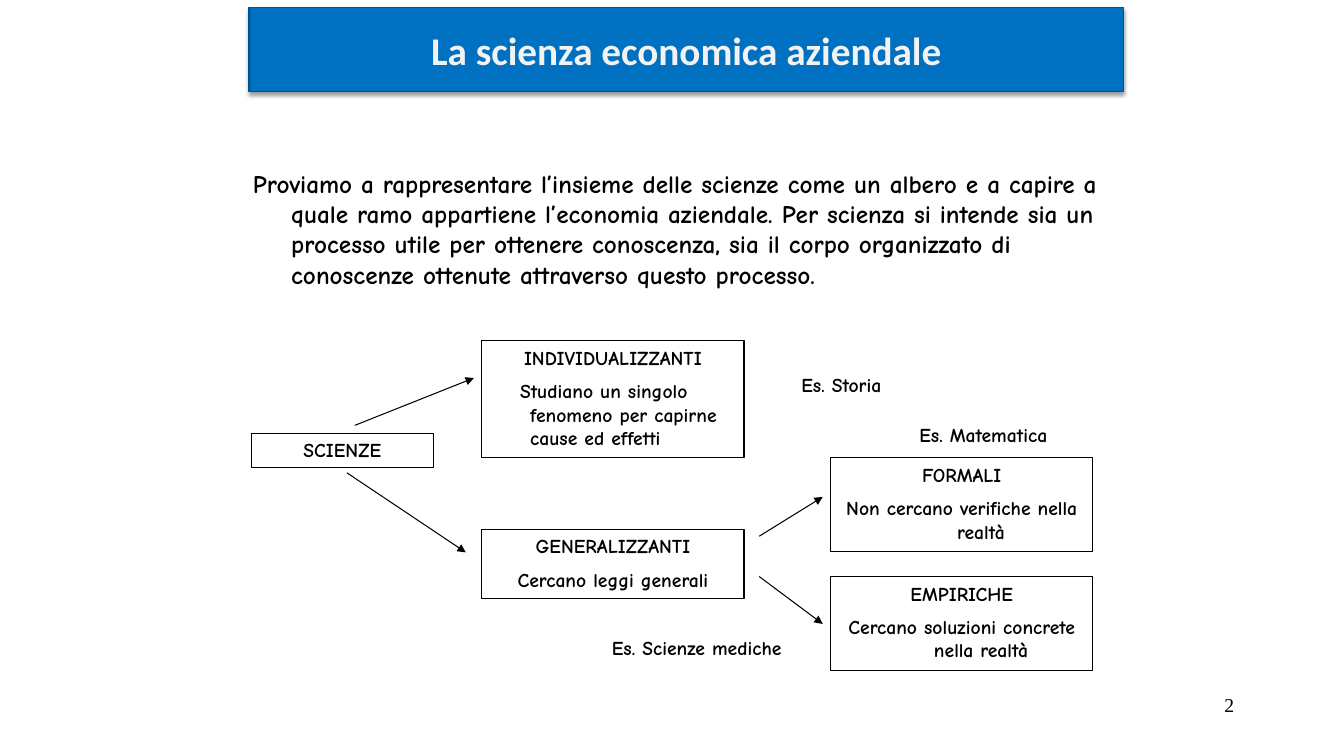
from lxml.etree import SubElement
from pptx import Presentation
from pptx.dml.color import RGBColor
from pptx.enum.shapes import MSO_CONNECTOR as Connector, MSO_SHAPE as Shape
from pptx.enum.text import MSO_ANCHOR as Anchor, PP_ALIGN as Align
from pptx.oxml.ns import qn
from pptx.util import Inches, Pt

TITLE = "La scienza economica aziendale"
INTRO = (
    "Proviamo a rappresentare l’insieme delle scienze come un albero e a capire a "
    "quale ramo appartiene l’economia aziendale. Per scienza si intende sia un "
    "processo utile per ottenere conoscenza, sia il corpo organizzato di "
    "conoscenze ottenute attraverso questo processo."
)
PAGE_NUMBER = "2"

COLUMNS = {"root": (2.49, 1.81), "branch": (4.78, 2.6), "leaf": (8.24, 2.6)}
# column, top, height, heading, description
BOXES = [
    ("root", 4.3, 0.34, "SCIENZE", None),
    ("branch", 3.38, 1.16, "INDIVIDUALIZZANTI",
     "Studiano un singolo fenomeno per capirne cause ed effetti"),
    ("branch", 5.25, 0.69, "GENERALIZZANTI", "Cercano leggi generali"),
    ("leaf", 4.54, 0.93, "FORMALI", "Non cercano verifiche nella realtà"),
    ("leaf", 5.72, 0.93, "EMPIRICHE", "Cercano soluzioni concrete nella realtà"),
]
LEFT_ALIGNED = {"INDIVIDUALIZZANTI"}
ARROWS = [
    ((3.52, 4.22), (4.7, 3.75)),
    ((3.44, 4.69), (4.62, 5.48)),
    ((7.53, 5.32), (8.16, 4.93)),
    ((7.53, 5.72), (8.16, 6.19)),
]
EXAMPLES = [
    ("Es. Storia", 7.85, 3.65, 2.07),
    ("Es. Matematica", 9.02, 4.15, 2.07),
    ("Es. Scienze mediche", 5.97, 6.26, 2.59),
]

THEME = {
    "black": RGBColor(0, 0, 0),
    "banner": RGBColor(0x00, 0x70, 0xC0),
    "banner_line": RGBColor(0x00, 0x52, 0x8F),
    "banner_text": RGBColor(0xF2, 0xF2, 0xF2),
    "title_font": "Calibri",
    "body_font": "Comic Neue",
    "number_font": "Times New Roman",
    "title_size": 28,
    "intro_size": 18,
    "label_size": 14,
    "line_width": 0.75,
}
HANGING = 0.38


def style(paragraph, size, font="body_font", color="black", bold=True, align=Align.LEFT):
    paragraph.alignment = align
    paragraph.font.size = Pt(THEME[size])
    for run in paragraph.runs:
        run.font.size = Pt(THEME[size])
        run.font.name = THEME[font]
        run.font.bold = bold
        run.font.color.rgb = THEME[color]


def indent(paragraph, first_line=-HANGING):
    properties = paragraph._p.get_or_add_pPr()
    properties.set("marL", str(Inches(HANGING)))
    properties.set("indent", str(Inches(first_line)))


def add_text(slide, text, left, top, width, height):
    box = slide.shapes.add_textbox(*map(Inches, (left, top, width, height)))
    box.text_frame.word_wrap = True
    box.text_frame.text = text
    return box.text_frame.paragraphs[0]


def add_rectangle(slide, left, top, width, height, line_color="black"):
    shape = slide.shapes.add_shape(
        Shape.RECTANGLE, *map(Inches, (left, top, width, height)))
    shape.shadow.inherit = False
    shape.line.color.rgb = THEME[line_color]
    shape.line.width = Pt(THEME["line_width"])
    shape.text_frame.word_wrap = True
    return shape


def add_banner(slide):
    banner = add_rectangle(slide, 2.47, 0.07, 8.67, 0.84, "banner_line")
    banner.fill.solid()
    banner.fill.fore_color.rgb = THEME["banner"]
    effects = banner._element.spPr.find(qn("a:effectLst"))
    shadow = SubElement(effects, qn("a:outerShdw"), blurRad=str(Pt(3.1)),
                        dist=str(Pt(1.6)), dir="5400000", rotWithShape="0")
    color = SubElement(shadow, qn("a:srgbClr"), val="000000")
    SubElement(color, qn("a:alpha"), val="38000")
    banner.text_frame.vertical_anchor = Anchor.MIDDLE
    banner.text_frame.text = TITLE
    style(banner.text_frame.paragraphs[0], "title_size", "title_font",
          "banner_text", align=Align.CENTER)


def add_box(slide, column, top, height, heading, description):
    left, width = COLUMNS[column]
    box = add_rectangle(slide, left, top, width, height)
    box.fill.background()
    frame = box.text_frame
    frame.vertical_anchor = Anchor.TOP
    frame.text = heading
    indent(frame.paragraphs[0])
    style(frame.paragraphs[0], "label_size", align=Align.CENTER)
    if description:
        paragraph = frame.add_paragraph()
        paragraph.text = description
        paragraph.space_before = Pt(THEME["label_size"] / 2)
        flush = heading in LEFT_ALIGNED
        indent(paragraph, -0.1 if flush else -HANGING)
        style(paragraph, "label_size", align=Align.LEFT if flush else Align.CENTER)


def add_arrow(slide, start, end):
    arrow = slide.shapes.add_connector(
        Connector.STRAIGHT, *map(Inches, (*start, *end)))
    arrow.line.color.rgb = THEME["black"]
    arrow.line.width = Pt(THEME["line_width"])
    SubElement(arrow.line._get_or_add_ln(), qn("a:tailEnd"), type="triangle")
    SubElement(arrow._element.spPr, qn("a:effectLst"))


def main():
    presentation = Presentation()
    presentation.slide_width = Inches(13.33)
    presentation.slide_height = Inches(7.5)
    slide = presentation.slides.add_slide(presentation.slide_layouts[6])

    number = add_text(slide, PAGE_NUMBER, 9.56, 6.83, 2.78, 0.5)
    style(number, "label_size", "number_font", bold=False, align=Align.RIGHT)
    add_banner(slide)
    intro = add_text(slide, INTRO, 2.41, 1.62, 8.67, 5.21)
    indent(intro)
    style(intro, "intro_size")
    for box in BOXES:
        add_box(slide, *box)
    for start, end in ARROWS:
        add_arrow(slide, start, end)
    for text, left, top, width in EXAMPLES:
        style(add_text(slide, text, left, top, width, 0.34), "label_size")

    presentation.save("out.pptx")


if __name__ == "__main__":
    main()
